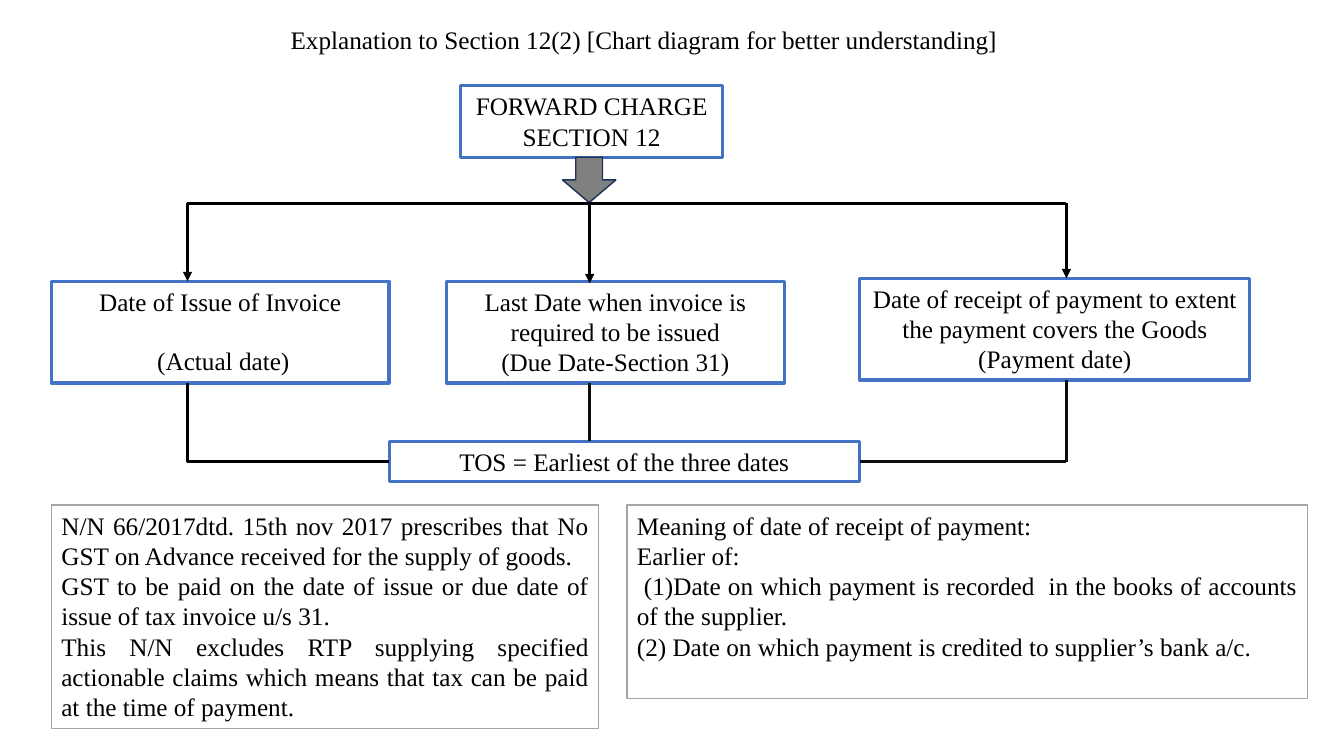
from lxml.etree import SubElement
from pptx import Presentation
from pptx.dml.color import RGBColor
from pptx.enum.shapes import MSO_CONNECTOR as Connector, MSO_SHAPE as Shape
from pptx.enum.text import MSO_ANCHOR as Anchor, PP_ALIGN as Align
from pptx.oxml.ns import qn
from pptx.util import Inches, Pt

COLORS = {
    "text": "000000",
    "paper": "FFFFFF",
    "box": "4472C4",
    "note": "A5A5A5",
    "arrow": "808080",
    "arrow_edge": "1E3256",
    "line": "000000",
    "soft_line": "0D0D0D",
}


class Diagram:
    columns, rows = 40, 30
    font, size = "Times New Roman", 18
    line_height = 20.7

    def __init__(self, presentation):
        self.width = presentation.slide_width
        self.height = presentation.slide_height
        self.slide = presentation.slides.add_slide(presentation.slide_layouts[6])

    def x(self, column):
        return round(self.width * column / self.columns)

    def y(self, row):
        return round(self.height * row / self.rows)

    def place(self, column, row, width, height):
        return self.x(column), self.y(row), self.x(width), self.y(height)

    def color(self, name):
        return RGBColor.from_string(COLORS[name])

    def add_text(self, shape, paragraphs, align, gap=0):
        frame = shape.text_frame
        frame.word_wrap = True
        frame.vertical_anchor = Anchor.TOP
        for index, text in enumerate(paragraphs):
            paragraph = frame.add_paragraph() if index else frame.paragraphs[0]
            paragraph.alignment = align
            paragraph.space_before = Pt(gap if index else 0)
            run = paragraph.add_run()
            run.text = text
            run.font.name = self.font
            run.font.size = Pt(self.size)
            run.font.color.rgb = self.color("text")

    def title(self, text, *area):
        shape = self.slide.shapes.add_textbox(*self.place(*area))
        self.add_text(shape, [text], Align.CENTER)

    def shape(self, kind, area, fill, edge, weight):
        shape = self.slide.shapes.add_shape(kind, *self.place(*area))
        shape.shadow.inherit = False
        shape.fill.solid()
        shape.fill.fore_color.rgb = self.color(fill)
        shape.line.color.rgb = self.color(edge)
        shape.line.width = Pt(weight)
        return shape

    def box(self, paragraphs, *area, gap=0):
        shape = self.shape(Shape.RECTANGLE, area, "paper", "box", 2.25)
        self.add_text(shape, paragraphs, Align.CENTER, gap)

    def note(self, paragraphs, *area):
        shape = self.shape(Shape.RECTANGLE, area, "paper", "note", 1)
        self.add_text(shape, paragraphs, Align.JUSTIFY)

    def block_arrow(self, *area):
        self.shape(Shape.DOWN_ARROW, area, "arrow", "arrow_edge", 1)

    def line(self, start, end, color="line", arrow=False):
        connector = self.slide.shapes.add_connector(
            Connector.STRAIGHT,
            self.x(start[0]), self.y(start[1]), self.x(end[0]), self.y(end[1]),
        )
        connector.line.color.rgb = self.color(color)
        connector.line.width = Pt(2.25)
        properties = connector._element.spPr
        if arrow:
            SubElement(properties.find(qn("a:ln")), qn("a:tailEnd"), type="triangle")
        SubElement(properties, qn("a:effectLst"))


def main():
    presentation = Presentation()
    presentation.slide_width = Inches(13.33)
    presentation.slide_height = Inches(7.5)
    diagram = Diagram(presentation)

    left, center, right = 5.58, 17.55, 31.74
    branch_row, result_row = 8.06, 17.52
    result_left, result_width, result_height = 11.58, 14.01, 1.6
    result_middle = result_row + result_height / 2
    date_row, payment_row, date_height = 11.16, 11.04, 4.04
    date_bottom = date_row + date_height
    payment_bottom = payment_row + date_height

    diagram.title(
        "Explanation to Section 12(2) [Chart diagram for better understanding]",
        4.98, 0.76, 28.38, 1.6,
    )
    diagram.box(["FORWARD CHARGE SECTION 12"], 13.71, 3.4, 7.8, 2.84)
    diagram.box(
        ["Date of Issue of Invoice", " (Actual date)"],
        1.53, date_row, 10.05, date_height, gap=diagram.line_height,
    )
    diagram.box(
        ["Last Date when invoice is required to be issued", "(Due Date-Section 31)"],
        13.29, date_row, 10.05, date_height,
    )
    diagram.box(
        ["Date of receipt of payment to extent the payment covers the Goods (Payment date)"],
        25.59, payment_row, 11.61, date_height,
    )
    diagram.block_arrow(16.74, 6.24, 1.59, 1.8)

    diagram.line((left, branch_row), (right, branch_row))
    for column, row in ((left, date_row), (center, date_row + 0.08), (right, payment_row)):
        diagram.line((column, branch_row), (column, row), arrow=True)

    diagram.box(
        ["TOS = Earliest of the three dates"],
        result_left, result_row, result_width, result_height,
    )
    result_right = result_left + result_width
    for start, end, color in (
        ((result_left, result_middle), (left, result_middle), "line"),
        ((left, date_bottom), (left, result_middle), "line"),
        ((result_right, result_middle), (right, result_middle), "soft_line"),
        ((right, result_middle), (right, payment_bottom), "soft_line"),
        ((center, date_bottom), (center, result_row), "soft_line"),
    ):
        diagram.line(start, end, color)

    diagram.note(
        [
            "N/N 66/2017dtd. 15th nov 2017 prescribes that No GST on Advance received for the supply of goods.",
            "GST to be paid on the date of issue or due date of issue of tax invoice u/s 31.",
            "This N/N excludes RTP supplying specified actionable claims which means that tax can be paid at the time of payment.",
        ],
        1.53, 20.04, 16.29, 8.88,
    )
    diagram.note(
        [
            "Meaning of date of receipt of payment:",
            "Earlier of:",
            " (1)Date on which payment is recorded  in the books of accounts of the supplier.",
            "(2) Date on which payment is credited to supplier’s bank a/c.",
        ],
        18.66, 20.04, 20.25, 7.68,
    )
    presentation.save("out.pptx")


if __name__ == "__main__":
    main()
